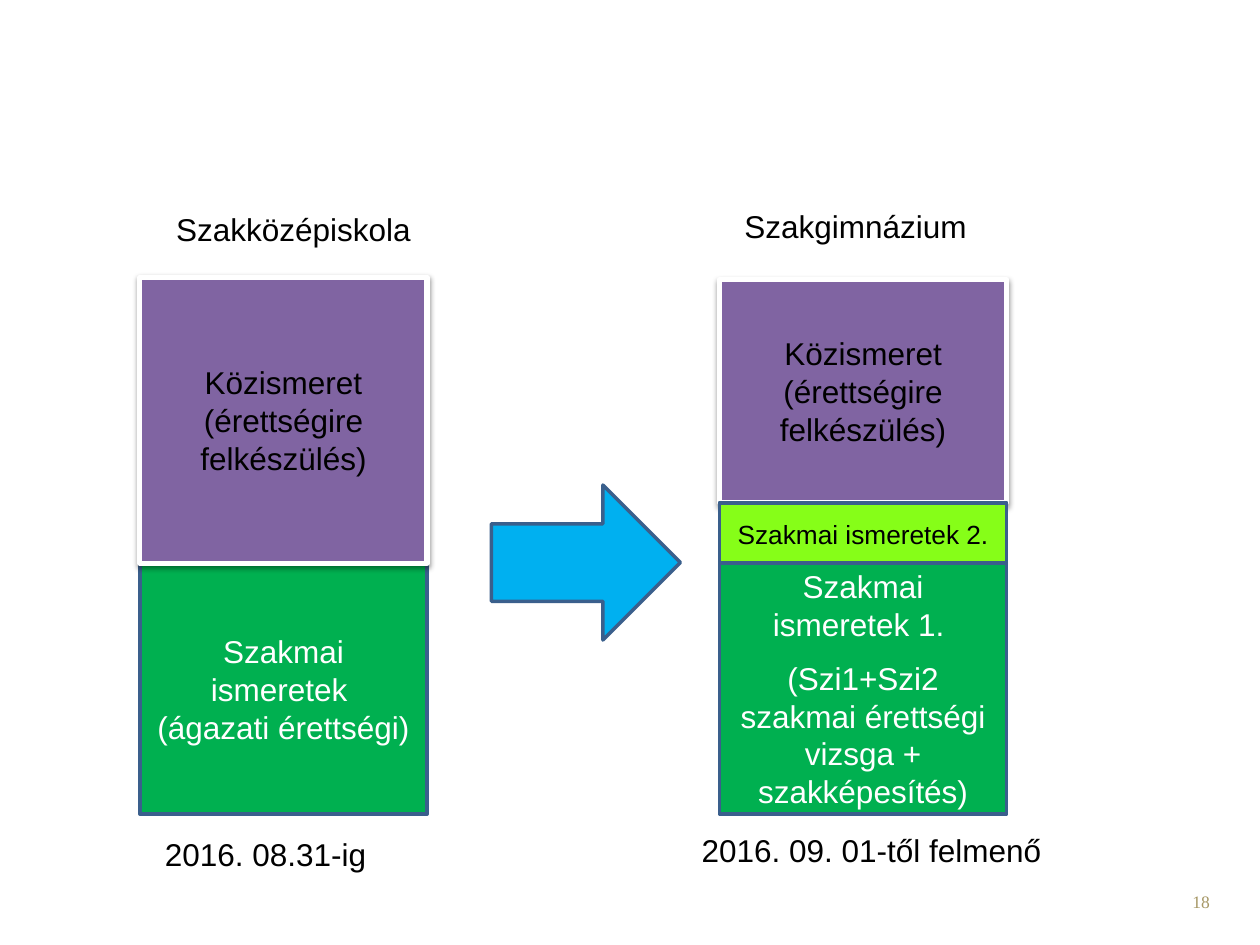
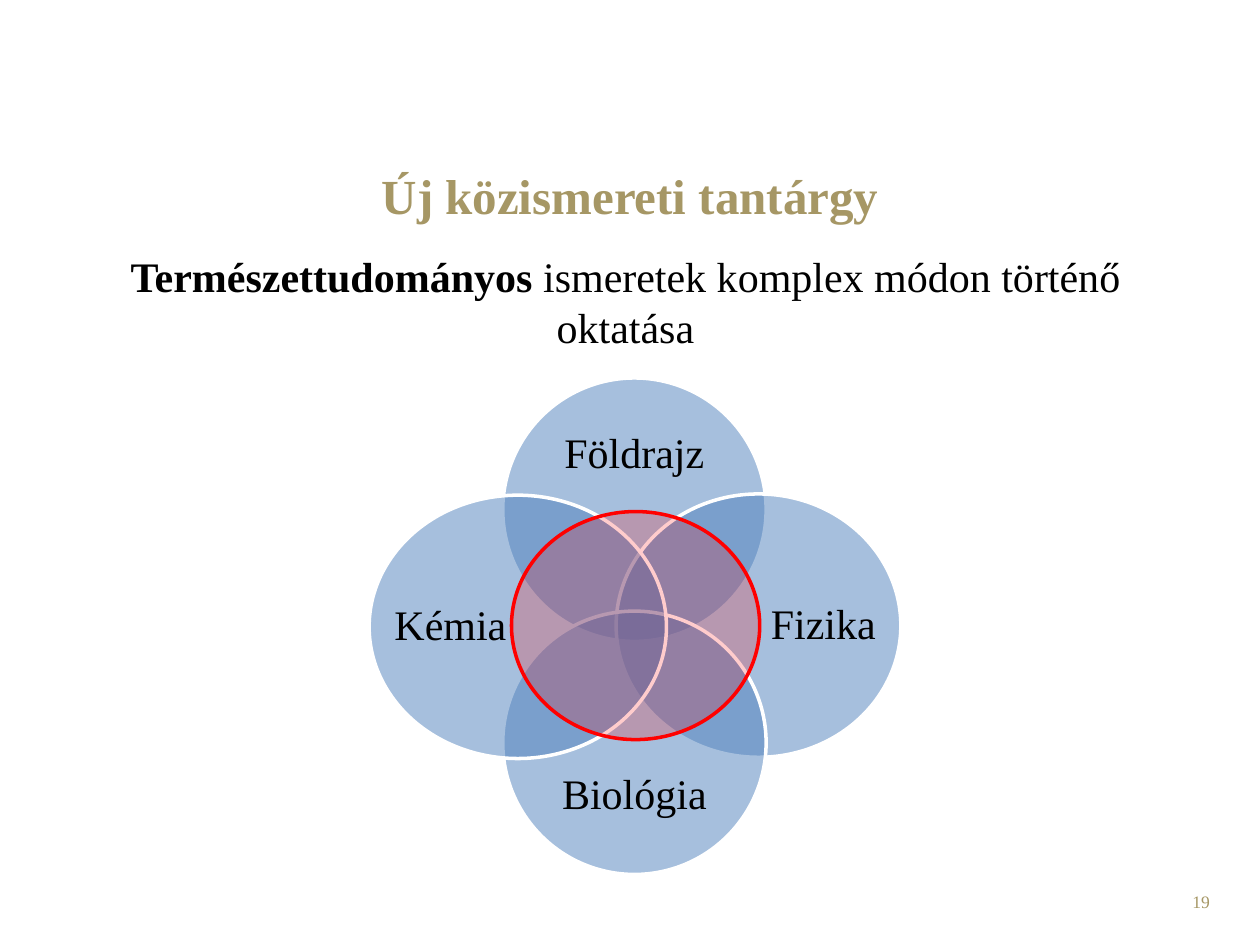
from lxml.etree import SubElement
from pptx import Presentation
from pptx.dml.color import RGBColor
from pptx.enum.shapes import MSO_SHAPE
from pptx.enum.text import MSO_ANCHOR, PP_ALIGN
from pptx.oxml.ns import qn
from pptx.util import Inches, Pt

WHITE = RGBColor(0xFF, 0xFF, 0xFF)
BLACK = RGBColor(0, 0, 0)
GOLD = RGBColor(0xA6, 0x97, 0x65)
GREEN = RGBColor(0x00, 0xB0, 0x50)
LIME = RGBColor(0x86, 0xFE, 0x18)
PURPLE = RGBColor(0x80, 0x64, 0xA2)
SKY = RGBColor(0x00, 0xB0, 0xF0)
NAVY = RGBColor(0x3A, 0x5F, 0x8C)
BLUE = RGBColor(0x4F, 0x81, 0xBD)
RED = RGBColor(0xFF, 0, 0)

SANS = {"name": "Arial", "size": Pt(18)}
SMALL = {"name": "Arial", "size": Pt(15)}
SERIF = {"name": "Times New Roman", "size": Pt(24)}
HEAD = {"name": "Times New Roman", "size": Pt(28), "bold": True}
FOOT = {"name": "Times New Roman", "size": Pt(10)}
TIGHT = {"margin_left": 0, "margin_right": 0, "margin_top": 0, "margin_bottom": 0}
MID = {"vertical_anchor": MSO_ANCHOR.MIDDLE}
LEFT, CENTER, RIGHT = PP_ALIGN.LEFT, PP_ALIGN.CENTER, PP_ALIGN.RIGHT


def apply(item, style):
    """Set every attribute named in a style on an item."""
    for key, value in style.items():
        setattr(item, key, value)


class Deck:
    """Holds the presentation, the current slide and its element styles."""

    def __init__(self):
        """Start an empty 4:3 presentation."""
        self.show = Presentation()
        self.show.slide_width, self.show.slide_height = Inches(10), Inches(7.5)

    def page(self, number):
        """Add a blank slide with its number in the footer."""
        self.slide = self.show.slides.add_slide(self.show.slide_layouts[6])
        self.label((7.37, 7.02, 2.33, 0.4), str(number), FOOT, GOLD, RIGHT)

    def words(self, frame, text, font, color, align, para):
        """Put in lines of text; a line may be a list of text and bold pairs."""
        lines = [text] if isinstance(text, str) else text
        for num, line in enumerate(lines):
            item = frame.add_paragraph() if num else frame.paragraphs[0]
            apply(item, {"alignment": align, **para})
            for part, bold in [(line, None)] if isinstance(line, str) else line:
                run = item.add_run()
                run.text = part
                apply(run.font, {"bold": bold, **font})
                run.font.color.rgb = color

    def label(self, at, text, font, color=BLACK, align=CENTER, frame=None, para=None):
        """Add a text box."""
        body = self.slide.shapes.add_textbox(*map(Inches, at)).text_frame
        apply(body, {"word_wrap": True, **(frame or {})})
        self.words(body, text, font, color, align, para or {})

    def shape(self, kind, at, fill, line, width=2, alpha=None):
        """Add a filled, outlined preset shape."""
        shape = self.slide.shapes.add_shape(kind, *map(Inches, at))
        shape.shadow.inherit = False
        shape.fill.solid()
        shape.fill.fore_color.rgb = fill
        shape.line.color.rgb = line
        shape.line.width = Pt(width)
        if alpha:
            tint = shape._element.spPr.find(qn("a:solidFill"))[0]
            SubElement(tint, qn("a:alpha"), val=str(alpha * 1000))
        return shape

    def block(self, at, text, fill, color, font=SANS, line=NAVY, width=2):
        """Add a rectangle with centred text."""
        shape = self.shape(MSO_SHAPE.RECTANGLE, at, fill, line, width)
        apply(shape.text_frame, MID)
        self.words(shape.text_frame, text, font, color, CENTER, {})
        return shape

    def raised(self, at, text):
        """Add a purple block with a white frame and a soft shadow."""
        shape = self.block(at, text, PURPLE, BLACK, line=WHITE, width=3)
        effect = shape._element.spPr.find(qn("a:effectLst"))
        shade = SubElement(effect, qn("a:outerShdw"), blurRad=str(int(Pt(3.1))),
                           dist=str(int(Pt(1.6))), dir="5400000", rotWithShape="0")
        tint = SubElement(shade, qn("a:srgbClr"), val=str(BLACK))
        SubElement(tint, qn("a:alpha"), val="38000")


def schools(deck):
    """Build the comparison of the two school types."""
    deck.page(18)
    old, new, wide, base, high = 1.11, 5.71, 2.28, 4.47, 1.99
    common = "Közismeret (érettségire felkészülés)"
    deck.block((old, base, wide, high),
               ["Szakmai ismeretek ", "(ágazati érettségi)"], GREEN, WHITE)
    deck.raised((old, 2.2, wide, base - 2.2), common)
    deck.raised((new, 2.22, wide, 1.77), common)
    deck.block((new, 3.99, wide, 0.49), "Szakmai ismeretek 2.", LIME, BLACK, SMALL)
    deck.shape(MSO_SHAPE.RIGHT_ARROW, (3.9, 3.85, 1.5, 1.23), SKY, NAVY)
    trade = deck.block((new, base, wide, high),
                       ["Szakmai ismeretek 1. ", "(Szi1+Szi2",
                        "szakmai érettségi vizsga + szakképesítés)"], GREEN, WHITE)
    trade.text_frame.paragraphs[1].space_before = Pt(9)
    for left, top, width, text in (
        (1.3, 1.62, 2.08, "Szakközépiskola"),
        (5.81, 1.59, 1.98, "Szakgimnázium"),
        (1.21, 6.58, 1.81, "2016. 08.31-ig"),
        (5.47, 6.55, 2.92, "2016. 09. 01-től felmenő"),
    ):
        deck.label((left, top, width, 0.4), text, SANS, align=LEFT,
                   frame={"word_wrap": False})


def subject(deck):
    """Build the diagram of the new subject."""
    deck.page(19)
    deck.label((0.5, 1.15, 9, 0.79), "Új közismereti tantárgy", HEAD, GOLD, frame=MID)
    deck.label((0.43, 1.94, 9.07, 1), [[
        ("Természettudományos", True),
        (" ismeretek komplex módon történő oktatása", False)]], SERIF)
    for left, top, width, text, spot in (
        (3.99, 3, 2.09, "Földrajz", (4.23, 3.28, 1.61, 0.66)),
        (4.89, 3.92, 2.26, "Fizika ", (6.1, 4.16, 0.87, 1.61)),
        (3.99, 4.85, 2.09, "Biológia", (4.23, 5.99, 1.61, 0.66)),
        (2.93, 3.93, 2.36, "Kémia", (3.12, 4.17, 0.91, 1.61)),
    ):
        deck.shape(MSO_SHAPE.OVAL, (left, top, width, 2.09), BLUE, WHITE, alpha=50)
        deck.label(spot, text, SERIF, frame={**TIGHT, **MID},
                   para={"line_spacing": 0.9})
    deck.shape(MSO_SHAPE.OVAL, (4.06, 4.06, 1.97, 1.81), RED, RED, alpha=20)


def main():
    """Build and save both slides."""
    deck = Deck()
    schools(deck)
    subject(deck)
    deck.show.save("out.pptx")


if __name__ == "__main__":
    main()
